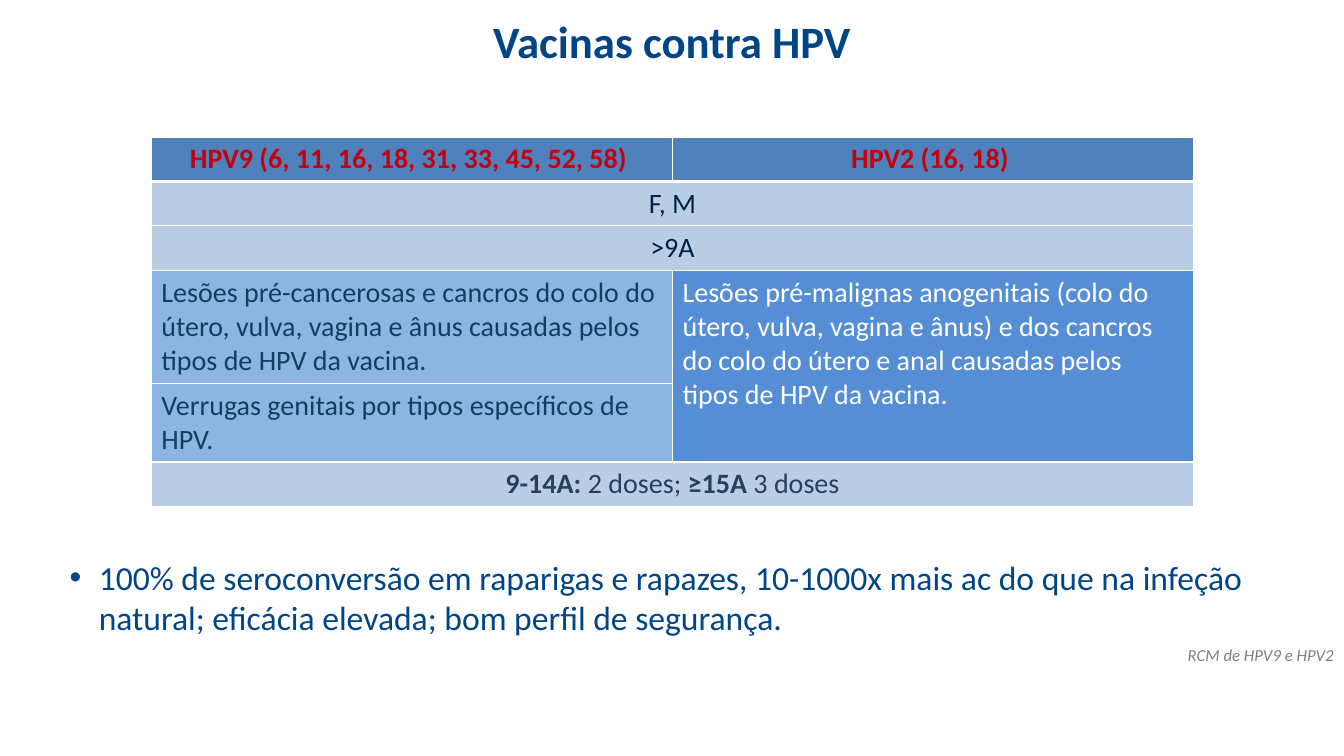
from dataclasses import dataclass

from lxml import etree
from pptx import Presentation
from pptx import util as u
from pptx.dml.color import RGBColor
from pptx.enum import text
from pptx.oxml import ns


@dataclass(frozen=True)
class Theme:
    """Colours, font and type sizes of the slide."""
    font: str = "Calibri"
    navy: str = "004586"
    grey: str = "808080"
    red: str = "C5000B"
    ink: str = "002243"
    teal: str = "143D64"
    slate: str = "254061"
    white: str = "FFFFFF"
    header: str = "4F81BD"
    pale: str = "B9CDE5"
    light: str = "8EB4E3"
    strong: str = "558ED5"
    title_size: int = 32
    body_size: int = 24
    cell_size: int = 20
    source_size: int = 12


THEME = Theme()
WIDTH, HEIGHT = 13.33, 7.5
CENTER, LEFT, RIGHT = text.PP_ALIGN.CENTER, text.PP_ALIGN.LEFT, text.PP_ALIGN.RIGHT
ROW_HEIGHTS = (0.44, 0.44, 0.44, 1.12, 0.78, 0.44)
CELLS = (
    (0, 0, 0, 0, THEME.header, THEME.red, CENTER,
     (("HPV9 (6, 11, 16, 18, 31, 33, 45, 52, 58) ", True),)),
    (0, 1, 0, 1, THEME.header, THEME.red, CENTER, (("HPV2 (16, 18) ", True),)),
    (1, 0, 1, 1, THEME.pale, THEME.ink, CENTER, (("F, M", False),)),
    (2, 0, 2, 1, THEME.pale, THEME.ink, CENTER, ((">9A", False),)),
    (3, 0, 3, 0, THEME.light, THEME.teal, LEFT,
     (("Lesões pré-cancerosas e cancros do colo do útero, vulva, vagina e ânus "
       "causadas pelos tipos de HPV da vacina.", False),)),
    (3, 1, 4, 1, THEME.strong, THEME.white, LEFT,
     (("Lesões pré-malignas anogenitais (colo do útero, vulva, vagina e ânus) e dos "
       "cancros do colo do útero e anal causadas pelos tipos de HPV da vacina.", False),)),
    (4, 0, 4, 0, THEME.light, THEME.teal, LEFT,
     (("Verrugas genitais por tipos específicos de HPV.", False),)),
    (5, 0, 5, 1, THEME.pale, THEME.slate, CENTER,
     (("9-14A: ", True), ("2 doses; ", False), ("≥15A ", True), ("3 doses", False))),
)


def set_all(target, values):
    """Set every named attribute on the target."""
    for name, value in values.items():
        setattr(target, name, value)


def style_font(font, size, color, bold=False, italic=False):
    """Apply the theme font with the given size, colour and weight."""
    set_all(font, dict(name=THEME.font, size=u.Pt(size), bold=bold, italic=italic))
    font.color.rgb = RGBColor.from_string(color)


def set_bullet(para, mark, margin=0, indent=0):
    """Give the paragraph a bullet mark, or none, with a hanging indent."""
    properties = para._p.get_or_add_pPr()
    properties.set("marL", str(u.Inches(margin)))
    properties.set("indent", str(u.Inches(indent)))
    if mark:
        etree.SubElement(properties, ns.qn("a:buFont"), typeface="Arial")
        etree.SubElement(properties, ns.qn("a:buChar"), char=mark)
    else:
        etree.SubElement(properties, ns.qn("a:buNone"))


def fill_placeholder(holder, box, words, align, anchor, bullet, font):
    """Move a placeholder to its box and write one formatted paragraph."""
    set_all(holder, dict(zip(("left", "top", "width", "height"), map(u.Inches, box))))
    frame = holder.text_frame
    set_all(frame, dict(word_wrap=True, auto_size=text.MSO_AUTO_SIZE.NONE,
                        vertical_anchor=anchor))
    para = frame.paragraphs[0]
    set_all(para, dict(alignment=align, space_before=u.Pt(0)))
    set_bullet(para, *bullet)
    span = para.add_run()
    span.text = words
    style_font(span.font, **font)


def set_borders(cell, widths):
    """Draw white borders, with widths in points keyed by side."""
    properties = cell._tc.get_or_add_tcPr()
    for side, width in widths.items():
        line = etree.SubElement(properties, ns.qn(f"a:ln{side}"), w=str(u.Pt(width)))
        solid = etree.SubElement(line, ns.qn("a:solidFill"))
        etree.SubElement(solid, ns.qn("a:srgbClr"), val=THEME.white)


def add_vaccine_table(page, box):
    """Place the vaccine comparison table in its box."""
    left, top, width, height = map(u.Inches, box)
    table = page.shapes.add_table(len(ROW_HEIGHTS), 2, left, top, width, height).table
    for row, row_height in zip(table.rows, ROW_HEIGHTS):
        row.height = u.Inches(row_height)
    for number in range(len(ROW_HEIGHTS)):
        for cell in table.rows[number].cells:
            set_borders(cell, dict(L=1, R=1, T=3 if number == 1 else 1,
                                   B=3 if number == 0 else 1))
    for row, column, last_row, last_column, fill, color, align, spans in CELLS:
        cell = table.cell(row, column)
        if (row, column) != (last_row, last_column):
            cell.merge(table.cell(last_row, last_column))
        for part_row in range(row, last_row + 1):
            for part_column in range(column, last_column + 1):
                part = table.cell(part_row, part_column)
                part.fill.solid()
                part.fill.fore_color.rgb = RGBColor.from_string(fill)
        para = cell.text_frame.paragraphs[0]
        para.alignment = align
        for words, bold in spans:
            span = para.add_run()
            span.text = words
            style_font(span.font, THEME.cell_size, color, bold)


def build_vaccine_page(deck):
    """Add the slide with title, table, key point and source."""
    page = deck.slides.add_slide(deck.slide_layouts[3])
    title, point, source = page.placeholders
    top, middle = text.MSO_ANCHOR.TOP, text.MSO_ANCHOR.MIDDLE
    fill_placeholder(title, (WIDTH * 0.05, HEIGHT * 0.01, WIDTH * 0.9, 0.66),
                     "Vacinas contra HPV", CENTER, middle, ("",),
                     dict(size=THEME.title_size, color=THEME.navy, bold=True))
    fill_placeholder(point, (0, HEIGHT * 0.73, WIDTH, 0.86),
                     "100% de seroconversão em raparigas e rapazes, 10-1000x mais ac do que "
                     "na infeção natural; eficácia elevada; bom perfil de segurança.",
                     LEFT, top, ("•", 0.88, -0.29),
                     dict(size=THEME.body_size, color=THEME.navy))
    fill_placeholder(source, (WIDTH * 0.05, 6.35, WIDTH * 0.95, 0.32),
                     "RCM de HPV9 e HPV2", RIGHT, top, ("",),
                     dict(size=THEME.source_size, color=THEME.grey, italic=True))
    add_vaccine_table(page, (1.5, 1.36, 10.34, sum(ROW_HEIGHTS)))


def main():
    """Build and save the deck."""
    deck = Presentation()
    set_all(deck, dict(slide_width=u.Inches(WIDTH), slide_height=u.Inches(HEIGHT)))
    build_vaccine_page(deck)
    deck.save("out.pptx")


if __name__ == "__main__":
    main()
